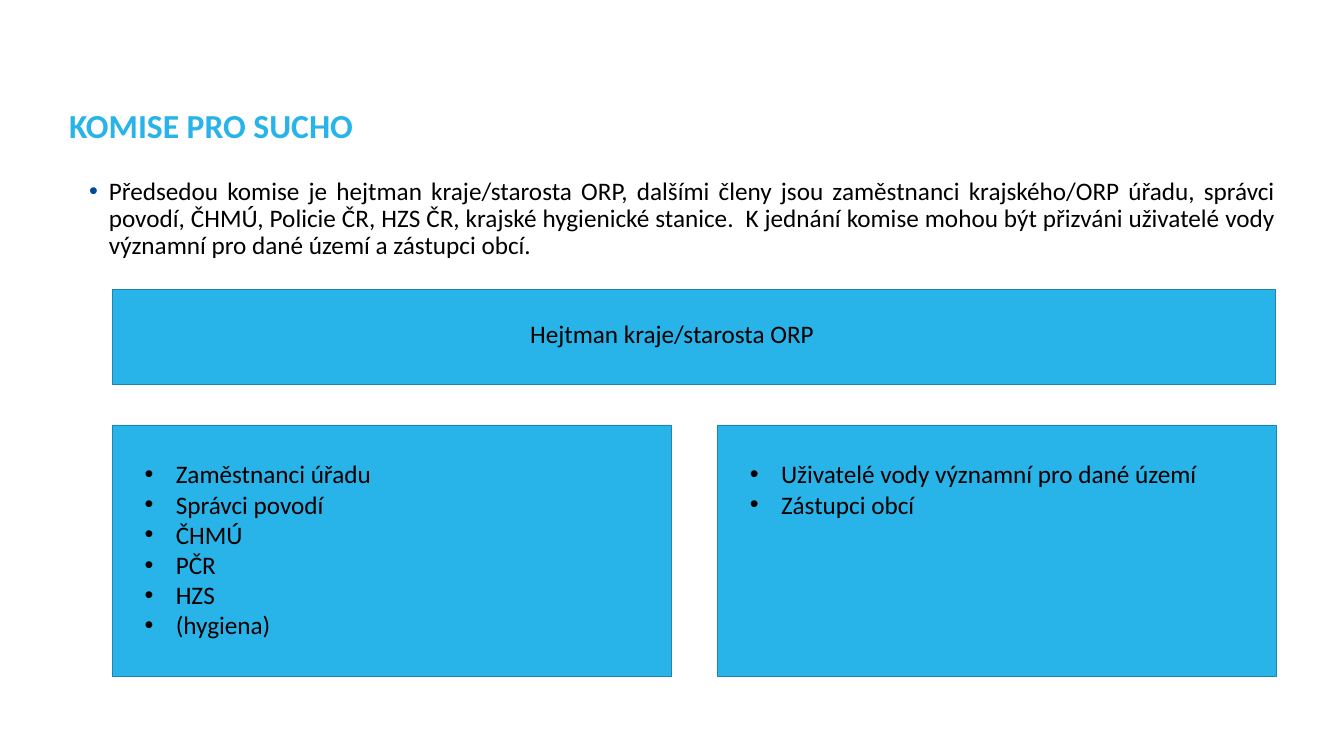
import pptx
import pptx.util
import pptx.dml.color
import pptx.enum.shapes
import pptx.enum.text
import pptx.oxml.ns
from lxml import etree
from pptx.util import Inches

FONT = "Calibri"
BLUE, EDGE, NAVY, BLACK = "29B4E9", "1E85AC", "004A99", "000000"
ALIGN = pptx.enum.text.PP_ALIGN
ANCHOR = pptx.enum.text.MSO_ANCHOR
AUTO_SIZE = pptx.enum.text.MSO_AUTO_SIZE
LEFT, GAP_LEFT = 2.23, 14.23
INTRO = (
    "Předsedou komise je hejtman kraje/starosta ORP, dalšími členy jsou "
    "zaměstnanci krajského/ORP úřadu, správci povodí, ČHMÚ, Policie ČR, HZS ČR, "
    "krajské hygienické stanice.  K jednání komise mohou být přizváni uživatelé "
    "vody významní pro dané území a zástupci obcí."
)
MEMBERS = ["Zaměstnanci úřadu", "Správci povodí", "ČHMÚ", "PČR", "HZS", "(hygiena)"]
GUESTS = ["Uživatelé vody významní pro dané území", "Zástupci obcí"]


def color(value):
    """Return the colour for a hex string."""
    return pptx.dml.color.RGBColor.from_string(value)


def style(para, size=36, fill=BLACK, bold=False, align=ALIGN.LEFT, spacing=None):
    """Format a whole paragraph."""
    para.alignment = align
    para.line_spacing = spacing
    para.font.name = FONT
    para.font.size = pptx.util.Pt(size)
    para.font.bold = bold
    para.font.color.rgb = color(fill)


def add_bullet(para, margin, hanging, fill=BLACK):
    """Give a paragraph a hanging round bullet."""
    qn = pptx.oxml.ns.qn
    props = para._p.get_or_add_pPr()
    props.set("marL", str(Inches(margin)))
    props.set("indent", str(-Inches(hanging)))
    tint = etree.SubElement(props, qn("a:buClr"))
    etree.SubElement(tint, qn("a:srgbClr"), val=fill)
    etree.SubElement(props, qn("a:buFont"), typeface="Arial")
    etree.SubElement(props, qn("a:buChar"), char="•")


def clear_margins(frame):
    """Remove the inner margins of a text frame."""
    frame.margin_left = frame.margin_top = frame.margin_right = frame.margin_bottom = 0


def add_title(page, text):
    """Place and format the title placeholder."""
    title = page.shapes.title
    title.left, title.top = Inches(1.37), Inches(2.17)
    title.width, title.height = Inches(23.94), Inches(1.34)
    frame = title.text_frame
    frame.text = text
    frame.auto_size = AUTO_SIZE.NONE
    frame.vertical_anchor = ANCHOR.TOP
    clear_margins(frame)
    style(frame.paragraphs[0], 48, BLUE, True, spacing=0.9)


def add_text_box(page, left, top, width, height):
    """Add a wrapping text box and return its frame."""
    box = page.shapes.add_textbox(Inches(left), Inches(top), Inches(width), Inches(height))
    box.text_frame.word_wrap = True
    return box.text_frame


def add_intro(page, text):
    """Add the justified introduction with its bullet."""
    frame = add_text_box(page, 1.37, 3.54, 23.94, 11.02)
    clear_margins(frame)
    para = frame.paragraphs[0]
    para.text = text
    add_bullet(para, 0.79, 0.39, NAVY)
    style(para, align=ALIGN.JUSTIFY, spacing=0.9)


def add_panel(page, left, top, width, height):
    """Add a blue rectangle."""
    panel = page.shapes.add_shape(
        pptx.enum.shapes.MSO_SHAPE.RECTANGLE,
        Inches(left), Inches(top), Inches(width), Inches(height),
    )
    panel.shadow.inherit = False
    panel.fill.solid()
    panel.fill.fore_color.rgb = color(BLUE)
    panel.line.color.rgb = color(EDGE)
    panel.line.width = pptx.util.Pt(1)


def add_caption(page, text):
    """Add the centred name of the chair."""
    frame = add_text_box(page, 10.17, 6.27, 6.33, 0.71)
    frame.auto_size = AUTO_SIZE.SHAPE_TO_FIT_TEXT
    frame.text = text
    style(frame.paragraphs[0], align=ALIGN.CENTER)


def add_list(page, left, width, height, items):
    """Add a bulleted list."""
    frame = add_text_box(page, left, 9.05, width, height)
    frame.auto_size = AUTO_SIZE.SHAPE_TO_FIT_TEXT
    frame.text = "\n".join(items)
    for para in frame.paragraphs:
        add_bullet(para, 0.62, 0.62)
        style(para)


def main():
    """Build the slide and save it."""
    deck = pptx.Presentation()
    deck.slide_width, deck.slide_height = Inches(26.67), Inches(15)
    page = deck.slides.add_slide(deck.slide_layouts.get_by_name("Title Only"))
    add_title(page, "KOMISE PRO SUCHO")
    add_intro(page, INTRO)
    add_panel(page, LEFT, 5.74, 23.07, 1.88)
    for left in (LEFT, GAP_LEFT):
        add_panel(page, left, 8.43, 11.1, 5)
    add_caption(page, "Hejtman kraje/starosta ORP")
    add_list(page, 2.77, 5.97, 3.74, MEMBERS)
    add_list(page, 14.78, 9.96, 1.31, GUESTS)
    deck.save("out.pptx")


if __name__ == "__main__":
    main()
